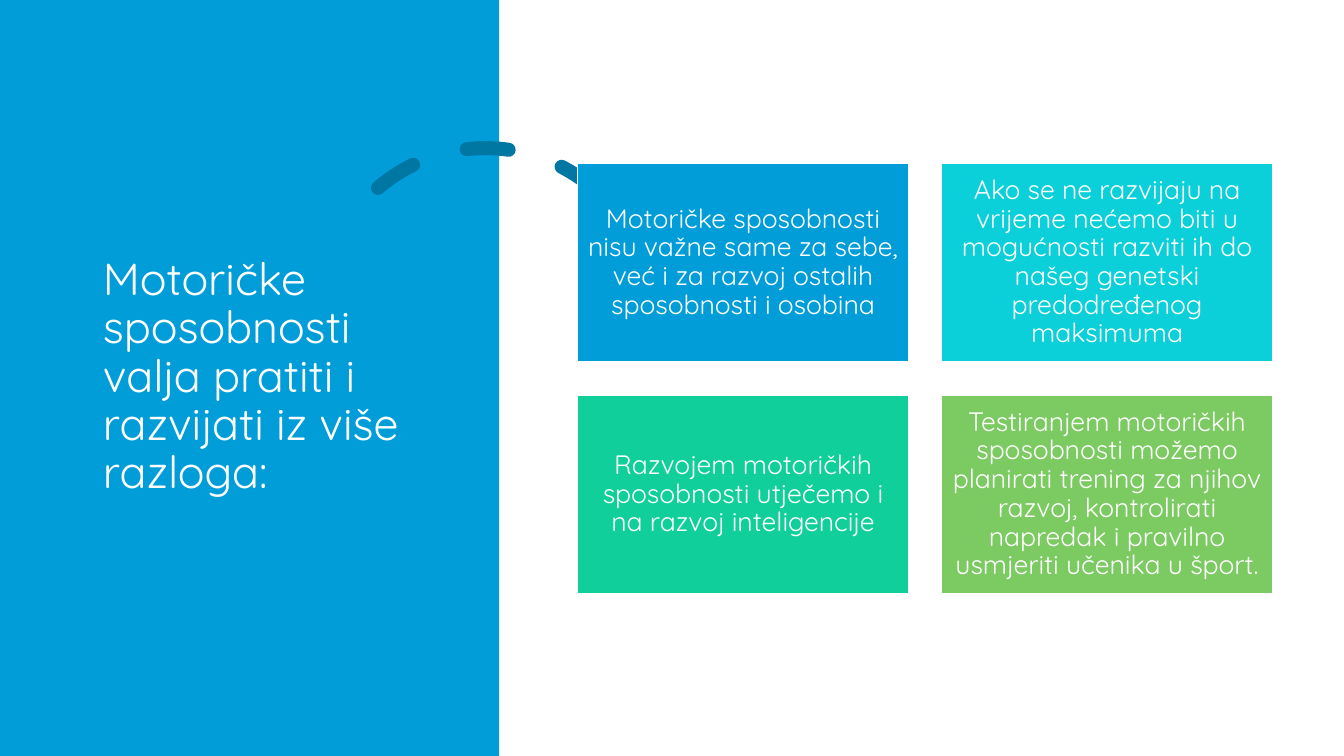
from lxml.etree import SubElement
from pptx import Presentation
from pptx.dml.color import RGBColor
from pptx.enum.dml import MSO_LINE
from pptx.enum.shapes import MSO_SHAPE
from pptx.enum.text import MSO_ANCHOR, MSO_AUTO_SIZE, PP_ALIGN
from pptx.util import Inches, Pt

WHITE = RGBColor(0xFF, 0xFF, 0xFF)
BLUE = RGBColor(0x00, 0x9D, 0xD9)
DARK_BLUE = RGBColor(0x00, 0x76, 0xA3)
CYAN = RGBColor(0x0B, 0xD0, 0xD9)
TEAL = RGBColor(0x10, 0xCF, 0x9B)
GREEN = RGBColor(0x7C, 0xCA, 0x62)
FONT = "Quicksand"

TITLE = "Motoričke sposobnosti valja pratiti i razvijati iz više razloga:"
REASONS = [
    ("Motoričke sposobnosti nisu važne same za sebe, već i za razvoj "
     "ostalih sposobnosti i osobina", BLUE),
    ("Ako se ne razvijaju na vrijeme nećemo biti u mogućnosti razviti ih do "
     "našeg genetski predodređenog maksimuma", CYAN),
    ("Razvojem motoričkih sposobnosti utječemo i na razvoj inteligencije", TEAL),
    ("Testiranjem motoričkih sposobnosti možemo planirati trening za njihov "
     "razvoj, kontrolirati napredak i pravilno usmjeriti učenika u šport.", GREEN),
]

COLUMNS = 2
CARD_LEFT, CARD_TOP = 5.73, 1.62
CARD_WIDTH, CARD_HEIGHT = 3.28, 1.97
CARD_GAP = 0.33
CARD_INSET = Inches(0.08)


def add_plain_shape(slide, kind, left, top, width, height):
    shape = slide.shapes.add_shape(
        kind, Inches(left), Inches(top), Inches(width), Inches(height))
    shape.shadow.inherit = False
    return shape


def write_text(frame, text, size, alignment):
    frame.text = text
    frame.word_wrap = True
    frame.auto_size = MSO_AUTO_SIZE.NONE
    frame.vertical_anchor = MSO_ANCHOR.MIDDLE
    paragraph = frame.paragraphs[0]
    paragraph.alignment = alignment
    paragraph.line_spacing = 0.9
    paragraph.font.name = FONT
    paragraph.font.size = Pt(size)
    paragraph.font.color.rgb = WHITE


def add_panel(slide):
    panel = add_plain_shape(slide, MSO_SHAPE.RECTANGLE, 0, 0, 4.95, 7.5)
    panel.fill.solid()
    panel.fill.fore_color.rgb = BLUE
    panel.line.fill.background()


def add_dashed_arc(slide):
    arc = add_plain_shape(slide, MSO_SHAPE.ARC, 3.18, 1.47, 3.27, 3.27)
    arc.adjustments[0] = 146.13
    arc.adjustments[1] = 0
    arc.rotation = 345.8
    arc.fill.background()
    arc.line.color.rgb = DARK_BLUE
    arc.line.width = Pt(10)
    arc.line.dash_style = MSO_LINE.DASH
    arc.line._get_or_add_ln().set("cap", "rnd")


def add_title(slide):
    title = slide.shapes.title
    title.left, title.top = Inches(0.92), Inches(0.7)
    title.width, title.height = Inches(3.23), Inches(6.09)
    write_text(title.text_frame, TITLE, 32, PP_ALIGN.LEFT)
    slide.shapes._spTree.append(title._element)  # in front of the panel


def add_card(slide, index, text, color):
    row, column = divmod(index, COLUMNS)
    card = add_plain_shape(
        slide, MSO_SHAPE.RECTANGLE,
        CARD_LEFT + column * (CARD_WIDTH + CARD_GAP),
        CARD_TOP + row * (CARD_HEIGHT + CARD_GAP),
        CARD_WIDTH, CARD_HEIGHT)
    card.fill.solid()
    card.fill.fore_color.rgb = color
    card.line.color.rgb = WHITE
    card.line.width = Pt(1)
    frame = card.text_frame
    frame.margin_left = frame.margin_right = CARD_INSET
    frame.margin_top = frame.margin_bottom = CARD_INSET
    write_text(frame, text, 19, PP_ALIGN.CENTER)


def main():
    presentation = Presentation()
    presentation.slide_width = Inches(13.33)
    presentation.slide_height = Inches(7.5)
    slide = presentation.slides.add_slide(presentation.slide_layouts[5])
    add_panel(slide)
    add_dashed_arc(slide)
    add_title(slide)
    for index, (text, color) in enumerate(REASONS):
        add_card(slide, index, text, color)
    presentation.save("out.pptx")


if __name__ == "__main__":
    main()
